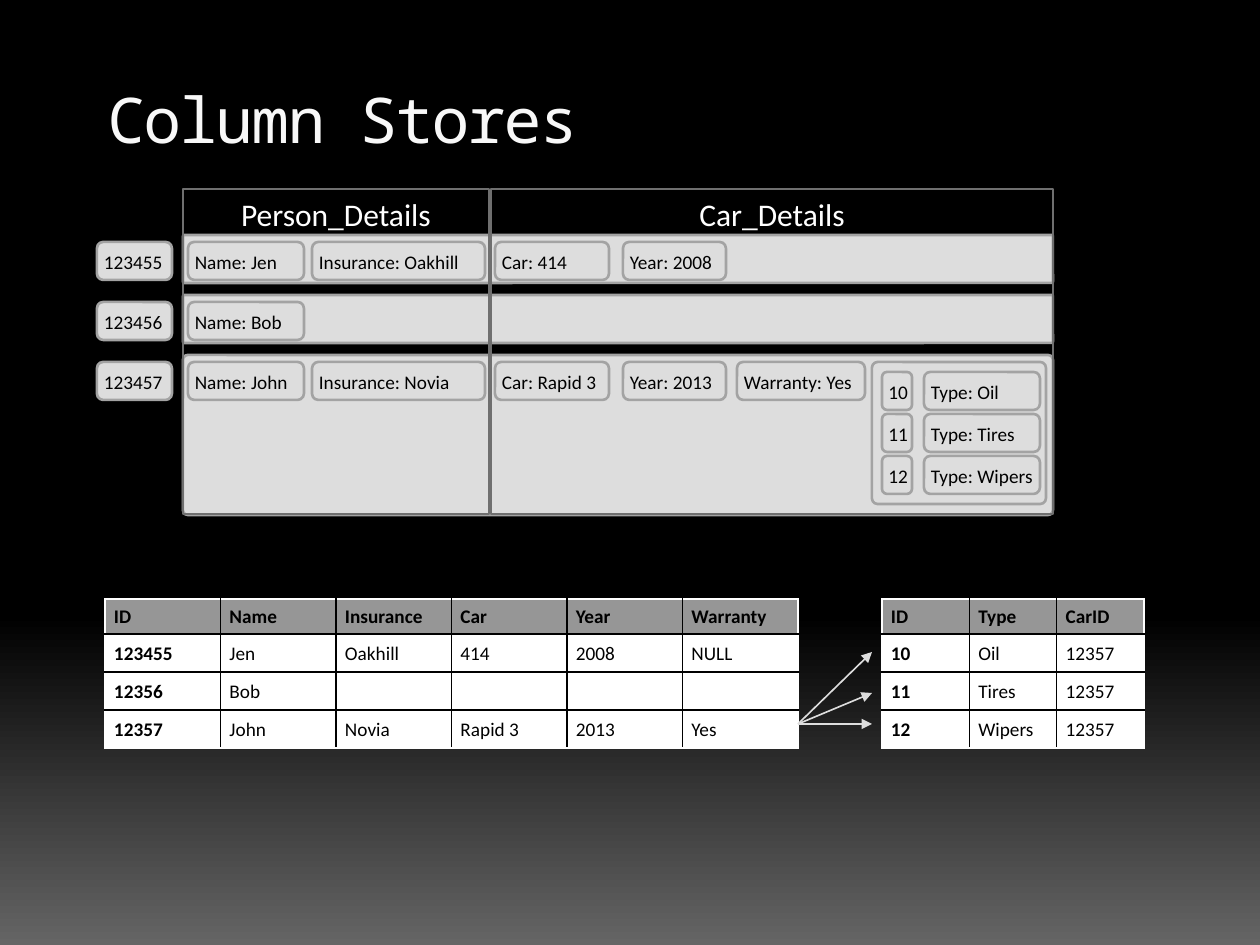
from lxml import etree
from pptx import Presentation
from pptx import util as u
from pptx.dml.color import RGBColor
from pptx.enum import shapes, text
from pptx.oxml import ns

SCALE = 914400 / 126
BLACK = RGBColor(0x00, 0x00, 0x00)
WHITE = RGBColor(0xFF, 0xFF, 0xFF)
TITLE_WHITE = RGBColor(0xF8, 0xF8, 0xF8)
FADE_GREY = RGBColor(0x65, 0x65, 0x65)
LIGHT_GREY = RGBColor(0xDD, 0xDD, 0xDD)
EDGE_GREY = RGBColor(0xA3, 0xA3, 0xA3)
FRAME_GREY = RGBColor(0x6F, 0x6F, 0x6F)
HEADER_GREY = RGBColor(0x96, 0x96, 0x96)

ROUNDED = shapes.MSO_SHAPE.ROUNDED_RECTANGLE
RECTANGLE = shapes.MSO_SHAPE.RECTANGLE
SMALL = {"size": u.Pt(11), "name": "Calibri"}
HEADING = {"size": u.Pt(18), "name": "Calibri"}
TITLE = {"size": u.Pt(36), "name": "Noto Sans Mono"}


def write(frame, words, color, font, spacing=None, align=text.PP_ALIGN.LEFT):
    paragraph = frame.paragraphs[0]
    paragraph.alignment = align
    paragraph.line_spacing = spacing
    run = paragraph.add_run()
    run.text = words
    run.font.color.rgb = color
    for name, value in font.items():
        setattr(run.font, name, value)
    return run


def add_box(kind, box, fill, line, corner=None):
    shape = slide.shapes.add_shape(kind, *[round(n * SCALE) for n in box])
    shape.shadow.inherit = False
    if fill is None:
        shape.fill.background()
    else:
        shape.fill.solid()
        shape.fill.fore_color.rgb = fill
    shape.line.color.rgb = line
    shape.line.width = u.Pt(1.5)
    if corner is not None:
        shape.adjustments[0] = corner
    return shape


presentation = Presentation()
presentation.slide_width = round(1260 * SCALE)
presentation.slide_height = round(945 * SCALE)
slide = presentation.slides.add_slide(presentation.slide_layouts[6])

background = slide.background.fill
background.gradient()
background.gradient_angle = 270
for stop, (position, color) in zip(background.gradient_stops, [(0.65, BLACK), (1, FADE_GREY)]):
    stop.position = position
    stop.color.rgb = color

title = slide.shapes.add_textbox(*[round(n * SCALE) for n in (95, 38, 1134, 160)])
title.text_frame.word_wrap = True
title.text_frame.vertical_anchor = text.MSO_ANCHOR.MIDDLE
title_run = write(title.text_frame, "Column Stores", TITLE_WHITE, TITLE)
title_run.font._element.set("spc", "-100")

CHIP_COLUMNS = [(97, 75), (188, 116), (312, 173), (495, 114), (623, 103), (737, 128)]
RECORDS = [
    (48, ["123455", "Name: Jen", "Insurance: Oakhill", "Car: 414", "Year: 2008", ""]),
    (48, ["123456", "Name: Bob", "", "", "", ""]),
    (160, ["123457", "Name: John", "Insurance: Novia", "Car: Rapid 3", "Year: 2013", "Warranty: Yes"]),
]
SERVICES = [("10", "Oil"), ("11", "Tires"), ("12", "Wipers")]

chips = []
for index, (height, labels) in enumerate(RECORDS):
    top = 235 + 60 * index
    add_box(ROUNDED, (183, top, 870, height), LIGHT_GREY, EDGE_GREY, 0.03)
    chips += [(left, top + 7, width, label)
              for (left, width), label in zip(CHIP_COLUMNS, labels) if label]

add_box(ROUNDED, (872, 362, 174, 142), LIGHT_GREY, EDGE_GREY, 0.04)
for index, (number, service) in enumerate(SERVICES):
    top = 372 + 42 * index
    chips += [(882, top, 30, number), (924, top, 116, f"Type: {service}")]

for left, top, width, label in chips:
    chip = add_box(ROUNDED, (left, top, width, 38), LIGHT_GREY, EDGE_GREY)
    frame = chip.text_frame
    for name, value in {
        "margin_left": round(5 * SCALE), "margin_right": 0, "margin_top": 0, "margin_bottom": 0,
        "word_wrap": True, "vertical_anchor": text.MSO_ANCHOR.MIDDLE,
    }.items():
        setattr(frame, name, value)
    write(frame, label, BLACK, SMALL, 1.07)

TABLES = [
    (105, 693, [
        ["ID", "Name", "Insurance", "Car", "Year", "Warranty"],
        ["123455", "Jen", "Oakhill", "414", "2008", "NULL"],
        ["12356", "Bob", "", "", "", ""],
        ["12357", "John", "Novia", "Rapid 3", "2013", "Yes"],
    ]),
    (882, 262, [["ID", "Type", "CarID"]] + [[*service, "12357"] for service in SERVICES]),
]
ROW_HEIGHTS = [35, 38, 38, 38]

for left, width, rows in TABLES:
    last_row, last_column = len(rows) - 1, len(rows[0]) - 1
    box = [round(n * SCALE) for n in (left, 599, width, sum(ROW_HEIGHTS))]
    table = slide.shapes.add_table(len(rows), len(rows[0]), *box).table
    for column in table.columns:
        column.width = round(width * SCALE / len(rows[0]))
    for r, values in enumerate(rows):
        table.rows[r].height = round(ROW_HEIGHTS[r] * SCALE)
        for c, value in enumerate(values):
            cell = table.cell(r, c)
            for name, setting in {
                "margin_left": round(9 * SCALE), "margin_right": round(9 * SCALE),
                "margin_top": 0, "margin_bottom": 0, "vertical_anchor": text.MSO_ANCHOR.MIDDLE,
            }.items():
                setattr(cell, name, setting)
            write(cell.text_frame, value, BLACK, {**SMALL, "bold": r == 0 or c == 0}, 1.07)
            outer_sides = {"lnL": c == 0, "lnR": c == last_column, "lnT": r == 0, "lnB": r == last_row}
            properties = cell._tc.get_or_add_tcPr()
            for side, outer in outer_sides.items():
                border = etree.SubElement(properties, ns.qn(f"a:{side}"), w=str(u.Pt(1)))
                solid = etree.SubElement(border, ns.qn("a:solidFill"))
                etree.SubElement(solid, ns.qn("a:srgbClr"), val=str(WHITE if outer else BLACK))
            cell.fill.solid()
            cell.fill.fore_color.rgb = HEADER_GREY if r == 0 else WHITE

for end_y in (652, 693, 724):
    ends = [round(n * SCALE) for n in (798, 724, 872, end_y)]
    arrow = slide.shapes.add_connector(shapes.MSO_CONNECTOR.STRAIGHT, *ends)
    arrow.line.color.rgb = LIGHT_GREY
    arrow.line.width = u.Pt(0.94)
    etree.SubElement(arrow.line._get_or_add_ln(), ns.qn("a:tailEnd"), type="triangle")
    etree.SubElement(arrow._element.spPr, ns.qn("a:effectLst"))

for left, width, heading in [(183, 306, "Person_Details"), (491, 562, "Car_Details")]:
    family = add_box(RECTANGLE, (left, 189, width, 325), None, FRAME_GREY)
    family.text_frame.vertical_anchor = text.MSO_ANCHOR.TOP
    write(family.text_frame, heading, WHITE, HEADING, align=text.PP_ALIGN.CENTER)

presentation.save("out.pptx")
